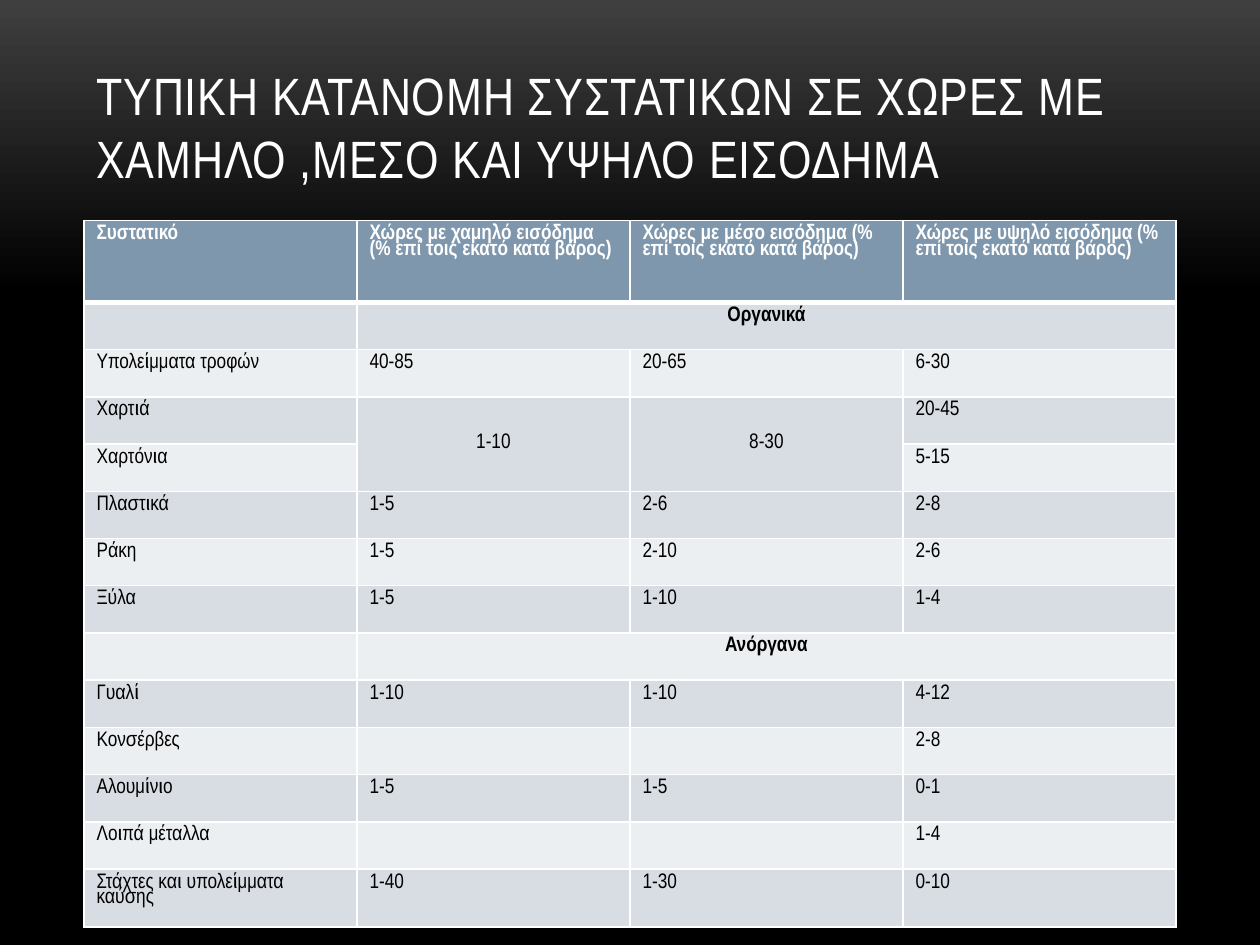
"""Build a slide with a table of typical waste composition by country income."""
from copy import deepcopy

from lxml import etree
from pptx import Presentation
from pptx import util as u
from pptx.dml.color import RGBColor
from pptx.enum import text
from pptx.oxml import ns

WIDE, HIGH = 10, 7.5
FACE = "Arial Narrow"
WHITE = RGBColor(0xFF, 0xFF, 0xFF)
BLACK = RGBColor(0, 0, 0)
GREY = RGBColor(0x3F, 0x3F, 0x3F)
BLUE = RGBColor(0x7E, 0x97, 0xAD)
BANDS = [RGBColor(0xEC, 0xEF, 0xF1), RGBColor(0xD8, 0xDD, 0xE3)]

LEFT, SPAN = WIDE / 15, WIDE * 13 / 15
HEAD, BODY, LAST = 0.65, HIGH / 20, 0.46
TITLE = "ΤΥΠΙΚΗ ΚΑΤΑΝΟΜΗ ΣΥΣΤΑΤΙΚΩΝ ΣΕ ΧΩΡΕΣ ΜΕ ΧΑΜΗΛΟ ,ΜΕΣΟ ΚΑΙ ΥΨΗΛΟ ΕΙΣΟΔΗΜΑ"
ROWS = [
    ["Συστατικό"] + [f"Χώρες με {level} εισόδημα (% επί τοις εκατό κατά βάρος)"
                     for level in ("χαμηλό", "μέσο", "υψηλό")],
    ["", "Οργανικά", "", ""],
    ["Υπολείμματα τροφών", "40-85", "20-65", "6-30"],
    ["Χαρτιά", "1-10", "8-30", "20-45"],
    ["Χαρτόνια", "", "", "5-15"],
    ["Πλαστικά", "1-5", "2-6", "2-8"],
    ["Ράκη", "1-5", "2-10", "2-6"],
    ["Ξύλα", "1-5", "1-10", "1-4"],
    ["", "Ανόργανα", "", ""],
    ["Γυαλί", "1-10", "1-10", "4-12"],
    ["Κονσέρβες", "", "", "2-8"],
    ["Αλουμίνιο", "1-5", "1-5", "0-1"],
    ["Λοιπά μέταλλα", "", "", "1-4"],
    ["Στάχτες και υπολείμματα καύσης", "1-40", "1-30", "0-10"],
]
GROUPS = (1, 8)
MERGES = [((row, 1), (row, 3)) for row in GROUPS] + [((3, col), (4, col)) for col in (1, 2)]


def style(run, size, color, bold=False):
    """Apply the shared font with the given size, colour and weight."""
    for key, value in {"name": FACE, "size": u.Pt(size), "bold": bold}.items():
        setattr(run.font, key, value)
    run.font.color.rgb = color


def shade(slide):
    """Fill the background with grey fading to black, top to bottom."""
    fill = slide.background.fill
    fill.gradient()
    fill.gradient_angle = 270
    for stop, color, place in zip(fill.gradient_stops, (GREY, BLACK), (0, 0.31)):
        stop.color.rgb, stop.position = color, place
    stops = next(slide.element.iter(ns.qn("a:gsLst")))
    final = deepcopy(stops[-1])
    final.set("pos", "100000")
    stops.append(final)


def title(slide):
    """Add the heading above the table."""
    box = slide.shapes.add_textbox(*map(u.Inches, (LEFT, 0.3, SPAN, HIGH / 6)))
    frame = box.text_frame
    frame.word_wrap = True
    frame.vertical_anchor = text.MSO_ANCHOR.BOTTOM
    run = frame.paragraphs[0].add_run()
    run.text = TITLE
    style(run, 30, WHITE)
    run.font._element.set("spc", "50")


def edge(cell, row):
    """Draw white cell borders, thick below the header row."""
    thick = {"T": row == 1, "B": row == 0}
    props = cell._tc.get_or_add_tcPr()
    for side in "LRTB":
        width = 3 if thick.get(side) else 1
        line = etree.SubElement(props, ns.qn(f"a:ln{side}"), w=str(u.Pt(width)))
        fill = etree.SubElement(line, ns.qn("a:solidFill"))
        etree.SubElement(fill, ns.qn("a:srgbClr"), val=str(WHITE))


def write(cell, words, row):
    """Fill one cell with its colour and words."""
    edge(cell, row)
    cell.fill.solid()
    cell.fill.fore_color.rgb = BANDS[row % 2] if row else BLUE
    para = cell.text_frame.paragraphs[0]
    para.line_spacing = 0.8
    if words:
        run = para.add_run()
        run.text = words
        style(run, 12, BLACK if row else WHITE, row in (0, *GROUPS))
    else:
        etree.SubElement(para._p, ns.qn("a:endParaRPr"), sz="1200")


def table(slide):
    """Add the composition table with its merged cells."""
    sizes = [HEAD] + [BODY] * (len(ROWS) - 2) + [LAST]
    frame = slide.shapes.add_table(len(ROWS), len(ROWS[0]),
                                   *map(u.Inches, (LEFT, 1.75, SPAN, sum(sizes))))
    grid = frame.table
    for row, (words, size) in enumerate(zip(ROWS, sizes)):
        grid.rows[row].height = u.Inches(size)
        for col, word in enumerate(words):
            write(grid.cell(row, col), word, row)
    for start, end in MERGES:
        cell = grid.cell(*start)
        cell.merge(grid.cell(*end))
        cell.text_frame.paragraphs[0].alignment = text.PP_ALIGN.CENTER
        if start[0] not in GROUPS:
            cell.vertical_anchor = text.MSO_ANCHOR.MIDDLE


def main():
    """Build and save the slide."""
    deck = Presentation()
    deck.slide_width, deck.slide_height = u.Inches(WIDE), u.Inches(HIGH)
    slide = deck.slides.add_slide(deck.slide_layouts[6])
    shade(slide)
    title(slide)
    table(slide)
    deck.save("out.pptx")


if __name__ == "__main__":
    main()
